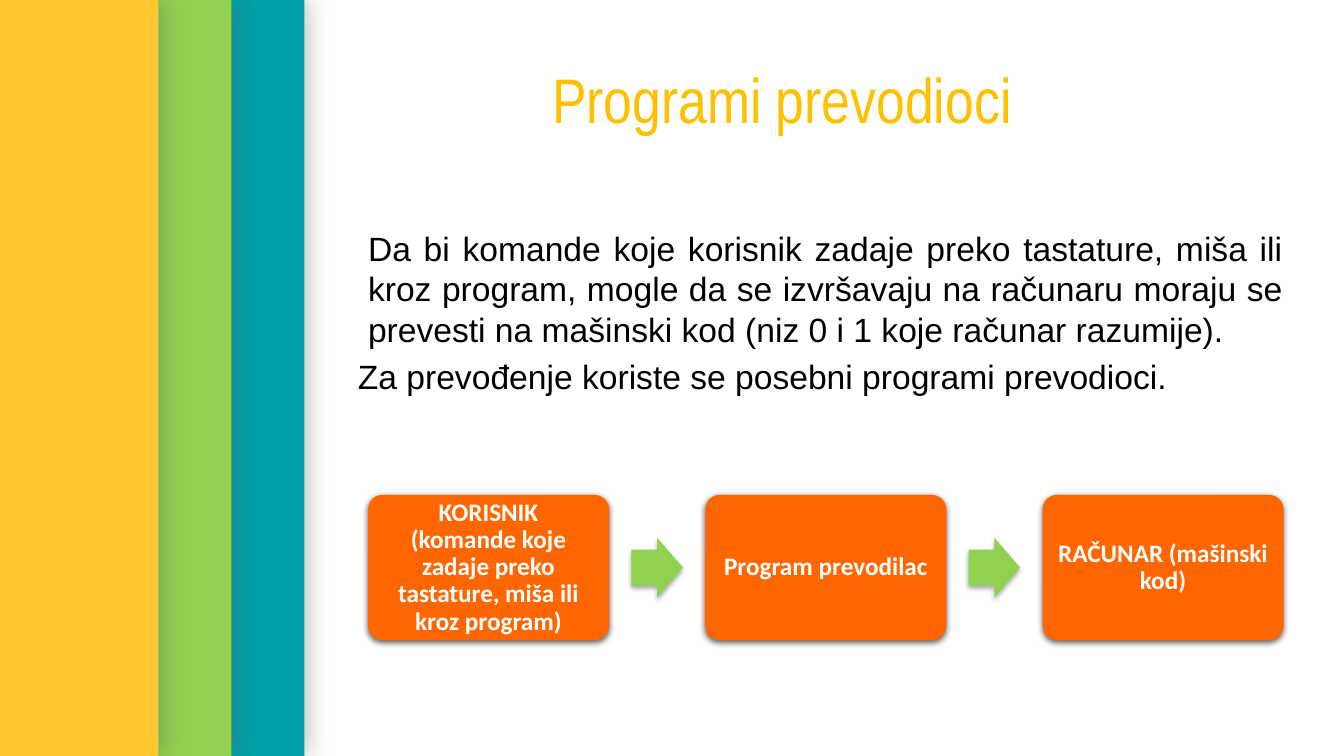
from lxml import etree
from pptx import Presentation
from pptx import util as u
from pptx.dml.color import RGBColor
from pptx.enum import shapes, text
from pptx.oxml.ns import qn

WIDTH, HEIGHT = 13.33, 7.5
COLORS = {
    "teal": "00A0A8", "green": "92D050", "yellow": "FEC630", "title": "FFC000",
    "orange": "FF6600", "white": "FFFFFF", "black": "000000", "grey": "595959",
}
# Colour, opacity in percent, blur and distance in points, direction in degrees
BAND_SHADOW = ("grey", 35, 17, 3, 0)
CARD_SHADOW = ("black", 63, 4.5, 1.5, 90)
ARROW_SHADOW = ("black", 32, 3.5, 2.2, 90)


def color(name):
    return RGBColor.from_string(COLORS[name])


def add_shadow(shape, name, opacity, blur, distance, direction):
    shape.shadow.inherit = False
    effects = shape.element.spPr.find(qn("a:effectLst"))
    shadow = etree.SubElement(
        effects, qn("a:outerShdw"), blurRad=str(u.Pt(blur)), dist=str(u.Pt(distance)),
        dir=str(direction * 60000), algn="ctr", rotWithShape="0")
    tint = etree.SubElement(shadow, qn("a:srgbClr"), val=COLORS[name])
    etree.SubElement(tint, qn("a:alpha"), val=str(opacity * 1000))


def add_block(page, kind, box, fill, shadow):
    shape = page.shapes.add_shape(kind, *map(u.Inches, box))
    shape.fill.solid()
    shape.fill.fore_color.rgb = color(fill)
    shape.line.fill.background()
    add_shadow(shape, *shadow)
    return shape


def add_span(para, words, font, size, name, bold=False):
    span = para.add_run()
    span.text = words
    span.font.name = font
    span.font.size = u.Pt(size)
    span.font.bold = bold
    span.font.color.rgb = color(name)


def place(holder, box):
    holder.left, holder.top, holder.width, holder.height = map(u.Inches, box)
    frame = holder.text_frame
    frame.word_wrap = True
    frame.auto_size = text.MSO_AUTO_SIZE.NONE
    frame.vertical_anchor = text.MSO_ANCHOR.TOP
    return frame


def add_bands(page, box):
    """Overlapping vertical bands, the widest at the back."""
    left, top, width, height = box
    for name, share in (("teal", 1), ("green", 0.76), ("yellow", 0.52)):
        add_block(page, shapes.MSO_SHAPE.RECTANGLE, (left, top, width * share, height),
                  name, BAND_SHADOW)


def fill_title(holder, box, words):
    para = place(holder, box).paragraphs[0]
    para.alignment = text.PP_ALIGN.CENTER
    para.line_spacing = 0.95
    add_span(para, words, "Arial Narrow", 45, "title")


def fill_body(holder, box, lines):
    frame = place(holder, box)
    for number, (words, margin) in enumerate(lines):
        para = frame.add_paragraph() if number else frame.paragraphs[0]
        para.alignment = text.PP_ALIGN.JUSTIFY
        para.space_before = u.Pt(4.8)
        props = para._p.get_or_add_pPr()
        props.set("marL", str(u.Inches(margin)))
        props.set("indent", "0")
        etree.SubElement(props, qn("a:buNone"))
        add_span(para, words, "Arial", 24, "black")


def add_card(page, box, words):
    card = add_block(page, shapes.MSO_SHAPE.ROUNDED_RECTANGLE, box, "orange", CARD_SHADOW)
    card.adjustments[0] = 0.1
    frame = card.text_frame
    frame.word_wrap = True
    frame.vertical_anchor = text.MSO_ANCHOR.MIDDLE
    frame.margin_left = frame.margin_right = u.Inches(0.11)
    frame.margin_top = frame.margin_bottom = u.Inches(0.11)
    para = frame.paragraphs[0]
    para.alignment = text.PP_ALIGN.CENTER
    para.line_spacing = 0.9
    add_span(para, words, "Calibri", 18, "white", bold=True)


def add_flow(page, box, steps):
    """Equal cards across the box, with an arrow in each gap."""
    left, top, width, height = box
    card, arrow, tall = 2.39, 0.51, 0.59
    pitch = (width - card) / (len(steps) - 1)
    gap = pitch - card
    for number, words in enumerate(steps):
        x = left + number * pitch
        add_card(page, (x, top, card, height), words)
        if number < len(steps) - 1:
            pointer = add_block(
                page, shapes.MSO_SHAPE.RIGHT_ARROW,
                (x + card + (gap - arrow) / 2, top + (height - tall) / 2, arrow, tall),
                "green", ARROW_SHADOW)
            pointer.adjustments[0] = 0.6


def build_slide(deck):
    page = deck.slides.add_slide(deck.slide_layouts[1])
    title, body = page.placeholders
    add_bands(page, (0, 0, 3.02, HEIGHT))
    fill_title(title, (2.17, 0.6, 11.17, 0.82), "Programi prevodioci")
    fill_body(body, (3.17, 2.21, 9.65, 1.8), [
        ("Da bi komande koje korisnik zadaje preko tastature, miša ili kroz program, "
         "mogle da se izvršavaju na računaru moraju se prevesti na mašinski kod "
         "(niz 0 i 1 koje računar razumije).", 0.38),
        ("Za prevođenje koriste se posebni programi prevodioci.", 0.28),
    ])
    add_flow(page, (3.65, 4.91, 9.08, 1.44), [
        "KORISNIK (komande koje zadaje preko tastature, miša ili kroz program)",
        "Program prevodilac",
        "RAČUNAR (mašinski kod)",
    ])


def main():
    deck = Presentation()
    deck.slide_width, deck.slide_height = u.Inches(WIDTH), u.Inches(HEIGHT)
    build_slide(deck)
    deck.save("out.pptx")


if __name__ == "__main__":
    main()
